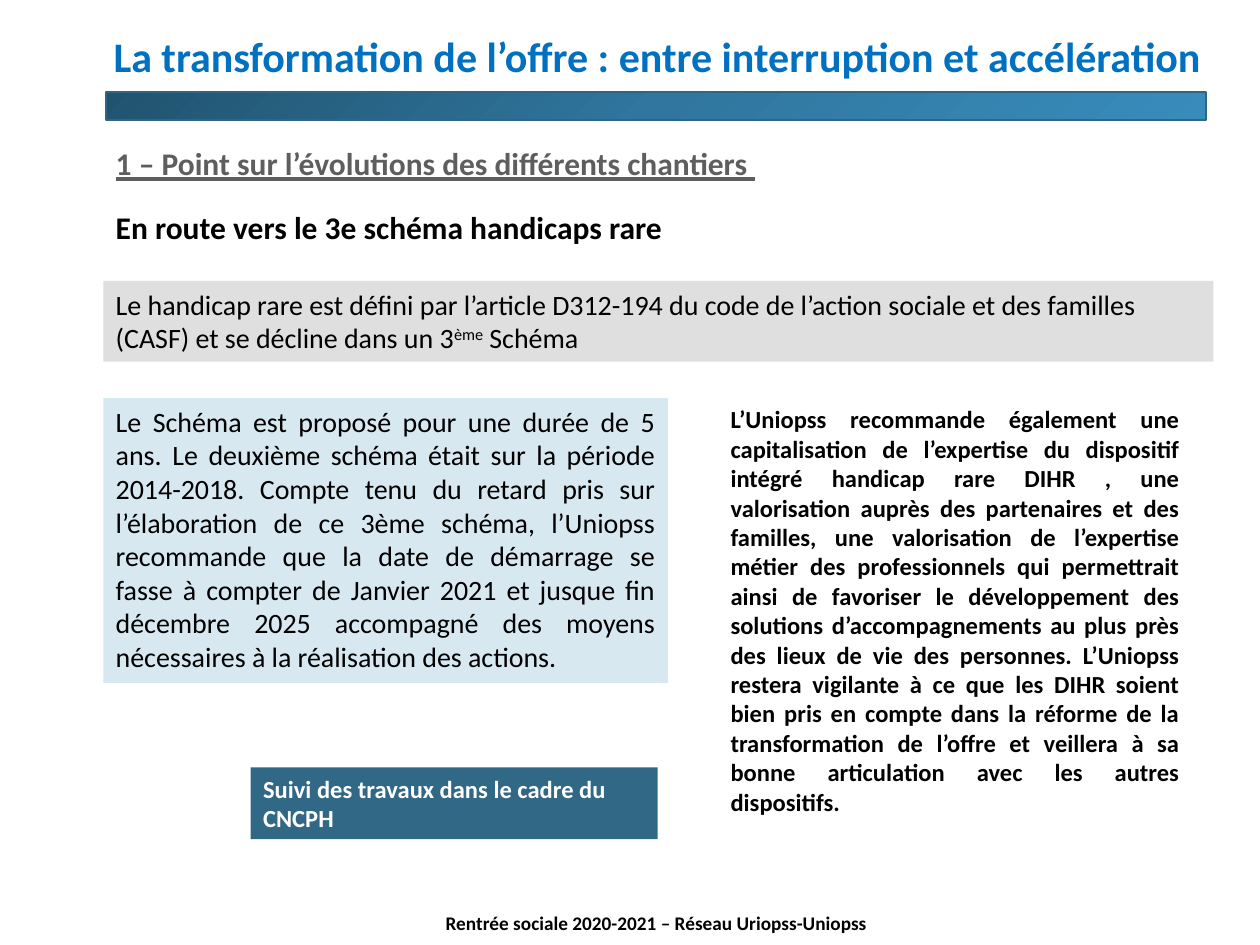
from copy import deepcopy

from pptx import Presentation
from pptx.dml.color import RGBColor
from pptx.enum.shapes import MSO_SHAPE
from pptx.enum.text import MSO_ANCHOR, PP_ALIGN
from pptx.util import Inches, Pt

RECT = MSO_SHAPE.RECTANGLE
TOP, BOTTOM = MSO_ANCHOR.TOP, MSO_ANCHOR.BOTTOM
LEFT, RIGHT, CENTER, JUSTIFY = PP_ALIGN.LEFT, PP_ALIGN.RIGHT, PP_ALIGN.CENTER, PP_ALIGN.JUSTIFY

THEME = {
    "font": "Calibri",
    "colors": {
        "title": "0070C0", "heading": "5E5E5E", "text": "000000", "light": "FFFFFF",
        "grey": "DFDFDF", "pale": "D8E8F1", "accent": "316886", "line": "306684",
    },
    "gradient": [(0, "21536F"), (0.5, "30769E"), (1, "388CBC")],
    "sizes": {"title": 24, "heading": 18, "body": 16, "note": 14, "footer": 11},
}

MARGIN = 0.82
COLUMNS_TOP = 3.16
BANNER = (0.84, 0.73, 8.73, 0.22)

BLOCKS = [
    {"at": (2.77, 7.18, 4.88, 0.29), "size": "footer", "bold": True, "align": CENTER,
     "text": ["Rentrée sociale 2020-2021 – Réseau Uriopss-Uniopss"]},
    {"at": (MARGIN, 1.13, 8.71, 0.33), "size": "heading", "color": "heading",
     "bold": True, "underline": True, "spacing": 0.9,
     "text": ["1 – Point sur l’évolutions des différents chantiers "]},
    {"at": (0.58, 0.13, 9.05, 0.57), "size": "title", "color": "title",
     "bold": True, "align": RIGHT, "anchor": BOTTOM, "spacing": 0.9,
     "text": ["La transformation de l’offre : entre interruption et accélération"]},
    {"at": (MARGIN, 1.6, 8.54, 0.4), "size": "heading", "bold": True,
     "text": ["En route vers le 3e schéma handicaps rare"]},
    {"at": (MARGIN, 2.23, 8.81, 0.64), "size": "body", "fill": "grey",
     "text": ["Le handicap rare est défini par l’article D312-194 du code de l’action "
              "sociale et des familles (CASF) et se décline dans un 3",
              ("ème", "superscript"), " Schéma"]},
    {"at": (MARGIN, COLUMNS_TOP, 4.48, 2.26), "size": "body", "fill": "pale", "align": JUSTIFY,
     "text": ["Le Schéma est proposé pour une durée de 5 ans. Le deuxième schéma était sur "
              "la période 2014-2018. Compte tenu du retard pris sur l’élaboration de ce 3ème "
              "schéma, l’Uniopss recommande que la date de démarrage se fasse à compter de "
              "Janvier 2021 et jusque fin décembre 2025 accompagné des moyens nécessaires à "
              "la réalisation des actions."]},
    {"at": (5.7, COLUMNS_TOP, 3.76, 3.4), "size": "note", "bold": True, "align": JUSTIFY,
     "text": ["L’Uniopss recommande également une capitalisation de l’expertise du dispositif "
              "intégré handicap rare DIHR , une valorisation auprès des partenaires et des "
              "familles, une valorisation de l’expertise métier des professionnels qui "
              "permettrait ainsi de favoriser le développement des solutions "
              "d’accompagnements au plus près des lieux de vie des personnes. L’Uniopss "
              "restera vigilante à ce que les DIHR soient bien pris en compte dans la réforme "
              "de la transformation de l’offre et veillera à sa bonne articulation avec les "
              "autres dispositifs."]},
    {"at": (1.99, 6.09, 3.23, 0.57), "size": "note", "color": "light", "bold": True,
     "fill": "accent", "text": ["Suivi des travaux dans le cadre du CNCPH"]},
]


def rgb(name):
    return RGBColor.from_string(THEME["colors"][name])


def add_rect(s, at):
    sp = s.shapes.add_shape(RECT, *map(Inches, at))
    sp.shadow.inherit = False
    return sp


def add_banner(s):
    sp = add_rect(s, BANNER)
    sp.fill.gradient()
    sp.fill.gradient_angle = 315
    first = sp._element.spPr.xpath(".//a:gs")[0]
    first.addnext(deepcopy(first))
    for stop, (position, color) in zip(sp.fill.gradient_stops, THEME["gradient"]):
        stop.position = position
        stop.color.rgb = RGBColor.from_string(color)
    sp.line.color.rgb = rgb("line")
    sp.line.width = Pt(1)


def add_block(s, block):
    if "fill" in block:
        sp = add_rect(s, block["at"])
        sp.fill.solid()
        sp.fill.fore_color.rgb = rgb(block["fill"])
        sp.line.fill.background()
    else:
        sp = s.shapes.add_textbox(*map(Inches, block["at"]))
    tf = sp.text_frame
    tf.word_wrap = True
    tf.vertical_anchor = block.get("anchor", TOP)
    p = tf.paragraphs[0]
    p.alignment = block.get("align", LEFT)
    p.line_spacing = block.get("spacing", 1.0)
    p.font.name = THEME["font"]
    p.font.size = Pt(THEME["sizes"][block["size"]])
    p.font.bold = block.get("bold", False)
    p.font.underline = block.get("underline", False)
    p.font.color.rgb = rgb(block.get("color", "text"))
    for part in block["text"]:
        r = p.add_run()
        if isinstance(part, tuple):
            r.text = part[0]
            r.font._element.set("baseline", "30000")
        else:
            r.text = part


def main():
    prs = Presentation()
    prs.slide_width, prs.slide_height = Inches(10), Inches(7.5)
    s = prs.slides.add_slide(prs.slide_layouts[6])
    add_banner(s)
    for block in BLOCKS:
        add_block(s, block)
    prs.save("out.pptx")


if __name__ == "__main__":
    main()
